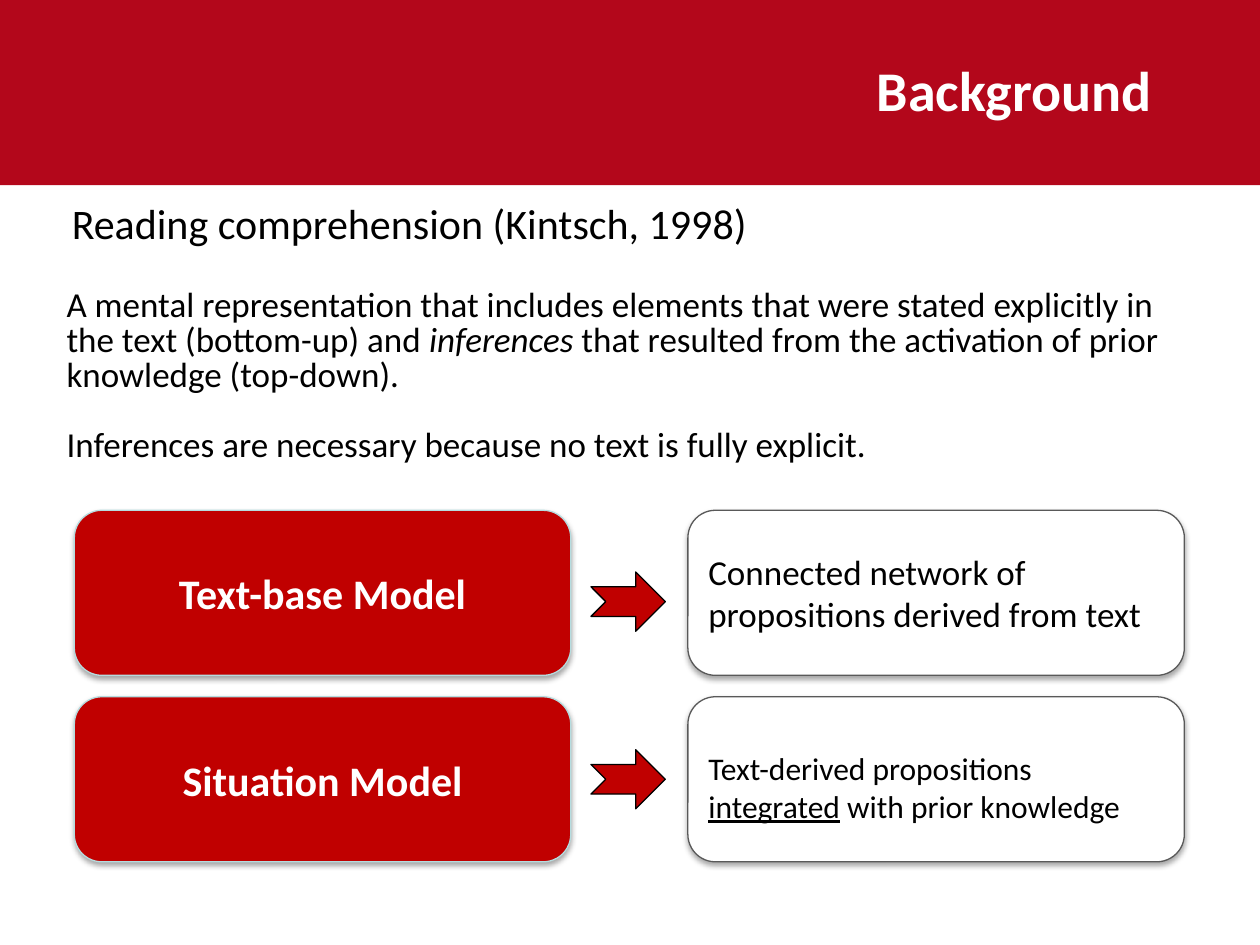
from lxml import etree
from pptx import Presentation
from pptx.dml.color import RGBColor
from pptx.enum.shapes import MSO_SHAPE
from pptx.enum.text import MSO_ANCHOR, PP_ALIGN
from pptx.oxml.ns import qn
from pptx.util import Inches, Pt

RECT, ROUNDED = MSO_SHAPE.RECTANGLE, MSO_SHAPE.ROUNDED_RECTANGLE
ARROW = MSO_SHAPE.NOTCHED_RIGHT_ARROW
TOP, MIDDLE = MSO_ANCHOR.TOP, MSO_ANCHOR.MIDDLE
LEFT, CENTER, JUSTIFY = PP_ALIGN.LEFT, PP_ALIGN.CENTER, PP_ALIGN.JUSTIFY

FONT = "Calibri"
BAND, RED, WHITE, BLACK = "B3071B", "C00000", "FFFFFF", "000000"
MODEL_LINE, MEANING_LINE = "B6DCDF", "595959"

# Content: a paragraph is a list of (text, style) runs
SECTION = "Background"
TITLE = "Reading comprehension (Kintsch, 1998)"
DEFINITION = [
    [("A mental representation that includes elements that were stated "
      "explicitly in the text (bottom-up) and ", ""),
     ("inferences", "italic"),
     (" that resulted from the activation of prior knowledge (top-down).", "")],
    [("Inferences are necessary because no text is fully explicit.", "")],
]
MODELS = [
    {"name": "Text-base Model", "arrow_top": 4.54, "size": 20,
     "anchor": MIDDLE, "inset": 0.05,
     "meaning": [("Connected network of propositions derived from text", "")]},
    {"name": "Situation Model", "arrow_top": 5.95, "size": 18,
     "anchor": TOP, "inset": 0.35,
     "meaning": [("Text-derived propositions ", ""),
                 ("integrated", "underline"),
                 (" with prior knowledge", "")]},
]

# Grid of the model rows, in inches
MODEL_X, ARROW_X, MEANING_X = 0.59, 4.69, 5.46
ROWS_TOP, ROW_STEP = 4.05, 1.48
CARD_W, CARD_H = 3.94, 1.31
ARROW_W, ARROW_H = 0.59, 0.47


def color(value):
    return RGBColor.from_string(value)


def write(shape, paragraphs, size, ink=BLACK, bold=False, align=LEFT,
          anchor=TOP, inset=0.05, leading=None, gap=0):
    frame = shape.text_frame
    frame.word_wrap = True
    frame.vertical_anchor = anchor
    frame.margin_top = Inches(inset)
    for index, runs in enumerate(paragraphs):
        paragraph = frame.add_paragraph() if index else frame.paragraphs[0]
        paragraph.alignment = align
        paragraph.space_before = Pt(gap if index else 0)
        if leading:
            paragraph.line_spacing = Pt(leading)
        for text, style in runs:
            run = paragraph.add_run()
            run.text = text
            font = run.font
            font.name, font.size, font.bold = FONT, Pt(size), bold
            font.color.rgb = color(ink)
            if style:
                setattr(font, style, True)


def add_shape(slide, kind, box, fill, line=None):
    shape = slide.shapes.add_shape(kind, *map(Inches, box))
    shape.shadow.inherit = False
    shape.fill.solid()
    shape.fill.fore_color.rgb = color(fill)
    if line:
        shape.line.color.rgb = color(line)
        shape.line.width = Pt(0.75)
    else:
        shape.line.fill.background()
    return shape


def add_card(slide, box, fill, line):
    card = add_shape(slide, ROUNDED, box, fill, line)
    effects = card._element.spPr.find(qn("a:effectLst"))
    shadow = etree.SubElement(effects, qn("a:outerShdw"), blurRad=str(Pt(3.1)),
                              dist=str(Pt(1.8)), dir="5400000", rotWithShape="0")
    ink = etree.SubElement(shadow, qn("a:srgbClr"), val=BLACK)
    etree.SubElement(ink, qn("a:alpha"), val="35000")
    return card


def main():
    deck = Presentation()
    deck.slide_width, deck.slide_height = Inches(10), Inches(7.5)
    slide = deck.slides.add_slide(deck.slide_layouts[5])

    # Header band and section name
    add_shape(slide, RECT, (0, -0.03, 10, 1.5), BAND)
    section = slide.shapes.add_textbox(*map(Inches, (6.86, 0.39, 2.76, 0.71)))
    write(section, [[(SECTION, "")]], 32, WHITE, bold=True, align=JUSTIFY)

    # Title
    title = slide.shapes.title
    title.left, title.top, title.width, title.height = map(
        Inches, (0.47, 1.52, 8.61, 0.74))
    write(title, [[(TITLE, "")]], 24)

    # Definition
    definition = slide.shapes.add_textbox(*map(Inches, (0.43, 2.25, 8.94, 1.78)))
    write(definition, DEFINITION, 20, leading=20, gap=20)

    # Models, each with an arrow to its meaning
    for row, model in enumerate(MODELS):
        top = ROWS_TOP + row * ROW_STEP
        name = add_card(slide, (MODEL_X, top, CARD_W, CARD_H), RED, MODEL_LINE)
        write(name, [[(model["name"], "")]], 24, WHITE, bold=True,
              align=CENTER, anchor=MIDDLE)
        meaning = add_card(slide, (MEANING_X, top, CARD_W, CARD_H),
                           WHITE, MEANING_LINE)
        write(meaning, [model["meaning"]], model["size"],
              anchor=model["anchor"], inset=model["inset"])
        add_shape(slide, ARROW, (ARROW_X, model["arrow_top"], ARROW_W, ARROW_H),
                  RED, BLACK)

    deck.save("out.pptx")


if __name__ == "__main__":
    main()
